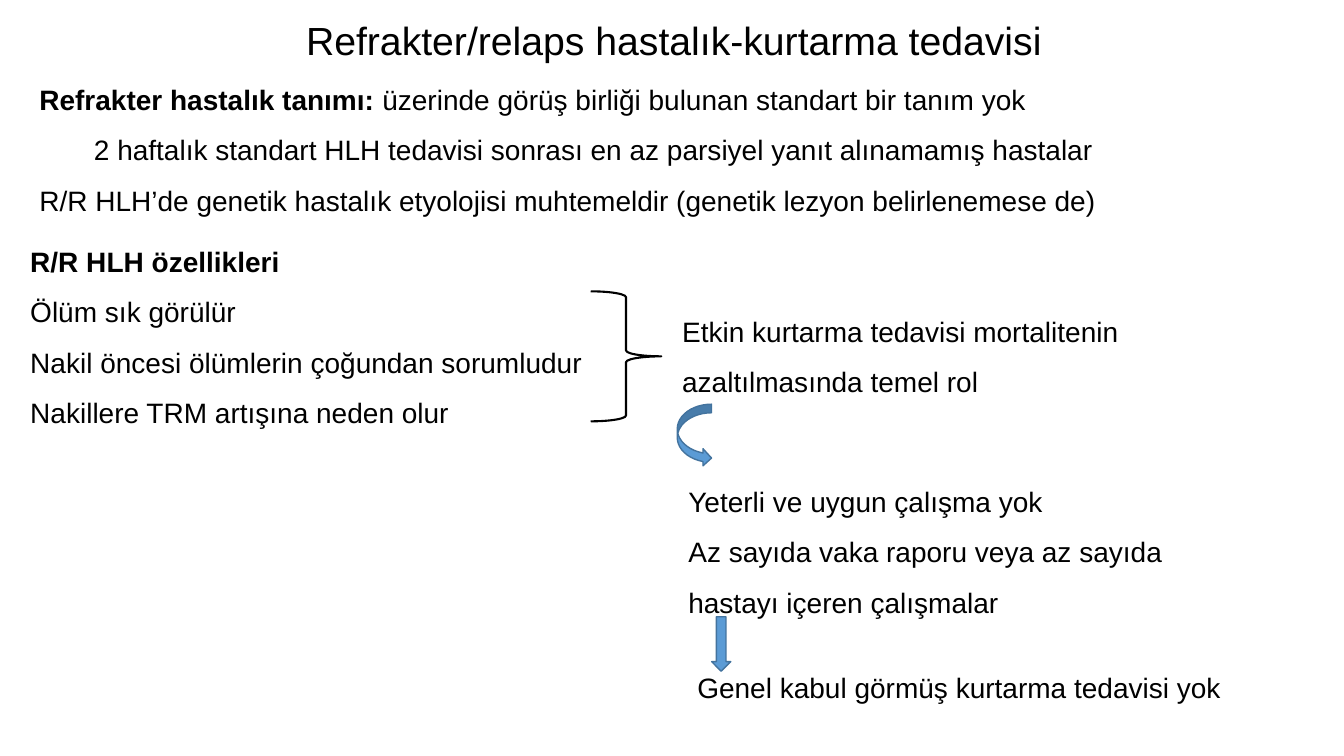
from dataclasses import dataclass

from lxml.etree import SubElement
from pptx import Presentation
from pptx.dml.color import RGBColor
from pptx.enum.shapes import MSO_SHAPE as Preset
from pptx.enum.text import MSO_ANCHOR as Anchor, MSO_AUTO_SIZE as AutoSize, PP_ALIGN as Align
from pptx.oxml.ns import qn
from pptx.util import Pt


@dataclass(frozen=True)
class Theme:
    font: str = "Arial"
    text: RGBColor = RGBColor(0x00, 0x00, 0x00)
    arrow_fill: RGBColor = RGBColor(0x5B, 0x9B, 0xD5)
    arrow_line: RGBColor = RGBColor(0x43, 0x73, 0x9E)
    title_size: int = 28
    body_size: int = 20
    brace_width: float = 1.5
    arrow_width: float = 1


THEME = Theme()


def place(shape, box):
    shape.left, shape.top, shape.width, shape.height = map(Pt, box)


def format_runs(paragraph, size):
    for run in paragraph.runs:
        run.font.name = THEME.font
        run.font.size = Pt(size)
        run.font.color.rgb = THEME.text


def write_lines(shape, lines, size=THEME.body_size, spacing=1.5, align=Align.LEFT):
    frame = shape.text_frame
    frame.text = "\n".join(lines)
    frame.word_wrap = True
    frame.vertical_anchor = Anchor.TOP
    frame.auto_size = AutoSize.SHAPE_TO_FIT_TEXT
    for paragraph in frame.paragraphs:
        paragraph.alignment = align
        paragraph.line_spacing = spacing
        paragraph.space_before = Pt(0)
        format_runs(paragraph, size)
    return frame.paragraphs


def fill_title(slide, box, text):
    place(slide.shapes.title, box)
    write_lines(slide.shapes.title, [text], THEME.title_size, 1, Align.CENTER)


def fill_list(placeholder, box, lines):
    place(placeholder, box)
    paragraphs = write_lines(placeholder, lines)
    for paragraph in paragraphs:
        indent_line(paragraph, 0)
        SubElement(paragraph._p.get_or_add_pPr(), qn("a:buNone"))
    paragraphs[0].runs[0].font.bold = True
    return paragraphs


def indent_line(paragraph, margin):
    properties = paragraph._p.get_or_add_pPr()
    properties.set("marL", str(Pt(margin)))
    properties.set("indent", "0")


def add_note(slide, box, lines, spacing=1.5):
    write_lines(slide.shapes.add_textbox(*map(Pt, box)), lines, spacing=spacing)


def add_preset(slide, preset, box, line_color, line_width, fill=None):
    shape = slide.shapes.add_shape(preset, *map(Pt, box))
    shape.shadow.inherit = False
    if fill is None:
        shape.fill.background()
    else:
        shape.fill.solid()
        shape.fill.fore_color.rgb = fill
    shape.line.color.rgb = line_color
    shape.line.width = Pt(line_width)


def add_arrow(slide, preset, box):
    add_preset(slide, preset, box, THEME.arrow_line, THEME.arrow_width, THEME.arrow_fill)


def main():
    presentation = Presentation()
    presentation.slide_width, presentation.slide_height = Pt(960), Pt(540)
    slide = presentation.slides.add_slide(presentation.slide_layouts[3])
    definition, features = list(slide.placeholders)[1:]

    fill_title(slide, (24.5, 8, 913.5, 41), "Refrakter/relaps hastalık-kurtarma tedavisi")

    heading, criterion, _ = fill_list(definition, (20.9, 43.2, 948, 116.6), [
        "Refrakter hastalık tanımı:",
        "2 haftalık standart HLH tedavisi sonrası en az parsiyel yanıt alınamamış hastalar",
        "R/R HLH’de genetik hastalık etyolojisi muhtemeldir (genetik lezyon belirlenemese de)",
    ])
    heading.add_run().text = " üzerinde görüş birliği bulunan standart bir tanım yok"
    format_runs(heading, THEME.body_size)
    indent_line(criterion, 39)

    fill_list(features, (14.4, 159.1, 931.7, 152.6), [
        "R/R HLH özellikleri",
        "Ölüm sık görülür",
        "Nakil öncesi ölümlerin çoğundan sorumludur",
        "Nakillere TRM artışına neden olur",
    ])

    add_preset(slide, Preset.RIGHT_BRACE, (422, 208.1, 50.4, 92.9), THEME.text, THEME.brace_width)
    add_note(slide, (480.2, 208.8, 369.4, 80),
             ["Etkin kurtarma tedavisi mortalitenin azaltılmasında temel rol"])
    add_arrow(slide, Preset.CURVED_RIGHT_ARROW, (483.8, 288.7, 24.5, 44.6))
    add_note(slide, (484.6, 330.5, 407.5, 116.6), [
        "Yeterli ve uygun çalışma yok",
        "Az sayıda vaka raporu veya az sayıda hastayı içeren çalışmalar",
    ])
    add_note(slide, (491, 475.2, 408.2, 31.7), ["Genel kabul görmüş kurtarma tedavisi yok"], 1)
    add_arrow(slide, Preset.DOWN_ARROW, (508.3, 440.6, 13.7, 38.9))

    presentation.save("out.pptx")


if __name__ == "__main__":
    main()
